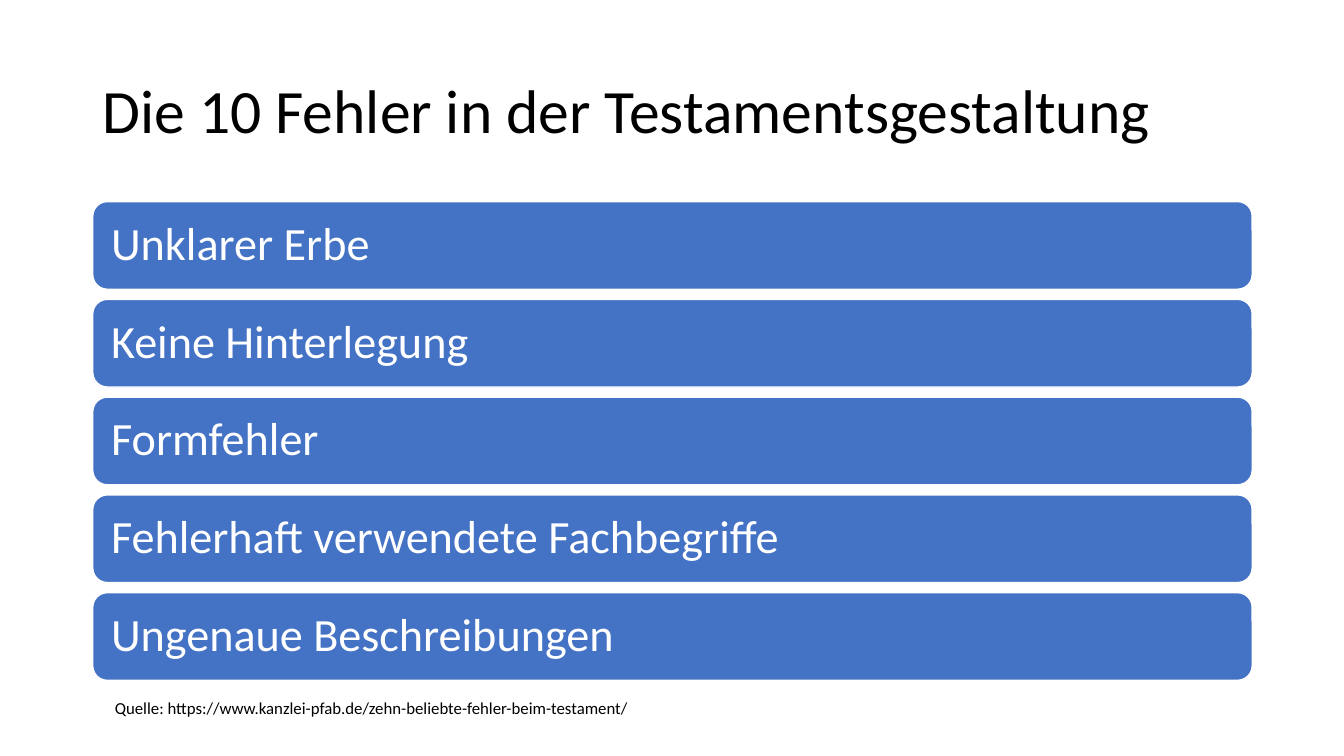
from pptx import Presentation
from pptx.dml.color import RGBColor
from pptx.enum import shapes, text
from pptx import util as u

PX = 9144
FONT = "Calibri"
COLORS = {"ink": "000000", "bar": "4472C4", "paper": "FFFFFF"}
MISTAKES = [
    "Unklarer Erbe",
    "Keine Hinterlegung",
    "Formfehler",
    "Fehlerhaft verwendete Fachbegriffe",
    "Ungenaue Beschreibungen",
]
LEFT, WIDTH = 92, 1150
BAR_TOP, BAR_HEIGHT, BAR_PITCH = 200, 87, 97


def px(length):
    """Turn a length in px into EMU."""
    return u.Emu(length * PX)


def color(name):
    """Look up a named colour."""
    return RGBColor.from_string(COLORS[name])


def write(shape, words, size, ink, spacing=1.0, inset_x=10, inset_y=5):
    """Put one left-aligned, vertically centred line of text into a shape."""
    frame = shape.text_frame
    frame.word_wrap = True
    frame.vertical_anchor = text.MSO_ANCHOR.MIDDLE
    frame.margin_left = frame.margin_right = px(inset_x)
    frame.margin_top = frame.margin_bottom = px(inset_y)
    para = frame.paragraphs[0]
    para.alignment = text.PP_ALIGN.LEFT
    para.line_spacing = spacing
    span = para.add_run()
    span.text = words
    span.font.name = FONT
    span.font.size = u.Pt(size)
    span.font.color.rgb = color(ink)


def add_label(page, left, top, width, height, words, size, spacing=1.0):
    """Add a text box with dark text."""
    box = page.shapes.add_textbox(px(left), px(top), px(width), px(height))
    write(box, words, size, "ink", spacing)


def add_bar(page, top, words):
    """Add a rounded bar naming one mistake."""
    bar = page.shapes.add_shape(
        shapes.MSO_SHAPE.ROUNDED_RECTANGLE,
        px(LEFT), px(top), px(WIDTH), px(BAR_HEIGHT),
    )
    bar.shadow.inherit = False
    bar.fill.solid()
    bar.fill.fore_color.rgb = color("bar")
    bar.line.color.rgb = color("paper")
    bar.line.width = u.Pt(1)
    write(bar, words, 33, "paper", 0.9, 14, 14)


def main():
    """Build the slide and save the deck."""
    deck = Presentation()
    deck.slide_width, deck.slide_height = px(1333), px(750)
    page = deck.slides.add_slide(deck.slide_layouts[6])
    add_label(page, LEFT, 40, WIDTH, 145,
              "Die 10 Fehler in der Testamentsgestaltung", 44, 0.9)
    for index, mistake in enumerate(MISTAKES):
        add_bar(page, BAR_TOP + index * BAR_PITCH, mistake)
    add_label(page, 104, 687, 952, 30,
              "Quelle: https://www.kanzlei-pfab.de/zehn-beliebte-fehler-beim-testament/", 12)
    deck.save("out.pptx")


if __name__ == "__main__":
    main()
